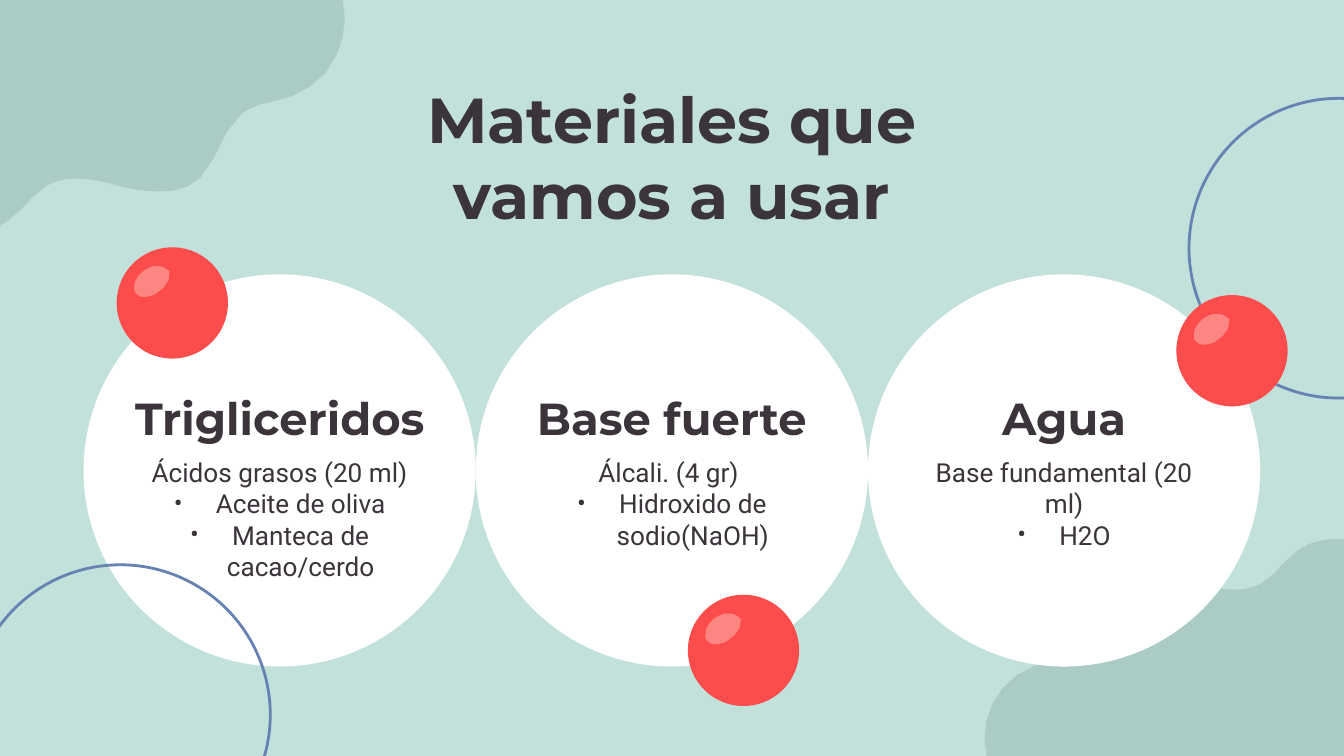
import pptx
import pptx.dml.color
import pptx.enum.shapes
import pptx.enum.text
import pptx.oxml
import pptx.oxml.ns
import pptx.util

Pt = pptx.util.Pt

COLORS = {
    "background": "C2E1DA",
    "blob": "AACCC4",
    "ring": "6582B2",
    "circle": "FFFFFF",
    "text": "3B343B",
    "ball": "FC4C4C",
    "highlight": "FC8782",
}
HEADING_FONT = "Montserrat"
BODY_FONT = "Roboto"
CIRCLE_LEFT, CIRCLE_TOP, CIRCLE_SIZE = 44.8, 147, 210.1
TEXT_WIDTH = 174.6
BALL_SIZE = 59.6
RING_SIZE = 160.6
INDENT = 22.5
CURVE_STEPS = 3

BLOB_HEIGHT = 116.4
BLOB_START = (190, 0)
BLOB_CURVES = [
    [(200, 0), (210, 3.6), (218, 10)],
    [(232.5, 22.3), (239.8, 41.8), (241.2, 61.2)],
    [(242.6, 79.9), (227.5, 97.9), (223.9, 116.4)],
    [(2.2, 116.4)],
    [(0, 107.3), (1.4, 97.2), (5, 89.3)],
    [(9.4, 79.2), (18, 72), (27.4, 68.4)],
    [(35.3, 65.5), (44.6, 65.5), (51.8, 60.5)],
    [(62.6, 52.6), (64.1, 36), (73.4, 27.4)],
    [(79.2, 22.3), (85.7, 20.9), (92.9, 20.9)],
    [(99.4, 20.9), (105.1, 21.6), (111.6, 23)],
    [(118.8, 25.2), (126.7, 27.4), (134.6, 27.4)],
    [(139.7, 27.4), (144.7, 26.6), (149.8, 23.8)],
    [(157, 19.4), (161.3, 12.2), (168.5, 6.5)],
    [(174.2, 2.2), (182.2, 0), (190, 0)],
]
HIGHLIGHT_START = (22.3, 10.1)
HIGHLIGHT_CURVES = [
    [(20.9, 10.1), (18.7, 10.1), (17.3, 10.8)],
    [(13.7, 12.2), (10.8, 15.1), (9.4, 18.7)],
    [(9.4, 20.9), (8.6, 22.3), (9.4, 23.8)],
    [(10.1, 25.2), (12.2, 26.6), (13.7, 26.6)],
    [(16.6, 26.6), (18.7, 25.9), (20.2, 25.2)],
    [(25.2, 22.3), (28.8, 18), (28.1, 13)],
    [(26.6, 11.5), (24.5, 10.1), (22.3, 10.1)],
]
MATERIALS = [
    ("Trigliceridos", "Ácidos grasos (20 ml)", ["Aceite de oliva", "Manteca de cacao/cerdo"]),
    ("Base fuerte", "Álcali. (4 gr) ", ["Hidroxido de sodio(NaOH)"]),
    ("Agua", "Base fundamental (20 ml)", ["H2O"]),
]
BALLS = [(62.5, 132.5), (368.5, 318.6), (630.2, 158.1)]


def color(name):
    return pptx.dml.color.RGBColor.from_string(COLORS[name])


def fill_shape(shape, name):
    shape.shadow.inherit = False
    shape.fill.solid()
    shape.fill.fore_color.rgb = color(name)
    shape.line.fill.background()


def add_ellipse(shapes, left, top, size):
    return shapes.add_shape(
        pptx.enum.shapes.MSO_SHAPE.OVAL, Pt(left), Pt(top), Pt(size), Pt(size)
    )


def add_ring(shapes, left, top):
    ring = add_ellipse(shapes, left, top, RING_SIZE)
    ring.shadow.inherit = False
    ring.fill.background()
    ring.line.color.rgb = color("ring")
    ring.line.width = Pt(1.5)


def outline_points(start, curves):
    points = [start]
    for curve in curves:
        if len(curve) == 1:
            points += curve
            continue
        controls = [points[-1], *curve]
        for step in range(1, CURVE_STEPS + 1):
            t = step / CURVE_STEPS
            weights = ((1 - t) ** 3, 3 * t * (1 - t) ** 2, 3 * t**2 * (1 - t), t**3)
            points.append(
                tuple(sum(w * p[axis] for w, p in zip(weights, controls)) for axis in (0, 1))
            )
    return points


def add_outline(shapes, start, curves, left, top, scale, name):
    points = [
        (Pt(left + x * scale), Pt(top + y * scale)) for x, y in outline_points(start, curves)
    ]
    builder = shapes.build_freeform(*points[0])
    builder.add_line_segments(points[1:-1], close=True)
    fill_shape(builder.convert_to_shape(), name)


def add_ball(slide, left, top):
    group = slide.shapes.add_group_shape()
    fill_shape(add_ellipse(group.shapes, left, top, BALL_SIZE), "ball")
    add_outline(group.shapes, HIGHLIGHT_START, HIGHLIGHT_CURVES, left + 0.3, top, 1, "highlight")


def prepare_frame(shape, anchor):
    frame = shape.text_frame
    frame.word_wrap = True
    frame.auto_size = pptx.enum.text.MSO_AUTO_SIZE.NONE
    frame.vertical_anchor = anchor
    frame.margin_left = frame.margin_right = Pt(7.2)
    frame.margin_top = frame.margin_bottom = Pt(7.2)
    return frame


def format_paragraph(paragraph, font_name, size, bold):
    paragraph.alignment = pptx.enum.text.PP_ALIGN.CENTER
    paragraph.line_spacing = 1.0
    paragraph.space_before = paragraph.space_after = Pt(0)
    for run in paragraph.runs:
        run.font.name = font_name
        run.font.size = Pt(size)
        run.font.bold = bold
        run.font.color.rgb = color("text")


def add_bullet(paragraph):
    properties = paragraph._p.get_or_add_pPr()
    properties.set("marL", str(Pt(INDENT)))
    properties.set("indent", str(-Pt(INDENT)))
    namespace = pptx.oxml.ns.nsdecls("a")
    for element in (
        f'<a:buClr {namespace}><a:srgbClr val="{COLORS["text"]}"/></a:buClr>',
        f'<a:buFont {namespace} typeface="{BODY_FONT}"/>',
        f'<a:buChar {namespace} char="•"/>',
    ):
        properties.append(pptx.oxml.parse_xml(element))


def set_title(slide, text):
    title = slide.shapes.title
    title.left, title.top, title.width, title.height = Pt(175.7), Pt(35.6), Pt(368.6), Pt(97.2)
    frame = prepare_frame(title, pptx.enum.text.MSO_ANCHOR.TOP)
    frame.text = text
    format_paragraph(frame.paragraphs[0], HEADING_FONT, 34, True)


def add_material(slide, left, heading, description, items):
    text_left = left + (CIRCLE_SIZE - TEXT_WIDTH) / 2
    heading_box = slide.shapes.add_textbox(Pt(text_left), Pt(201.6), Pt(TEXT_WIDTH), Pt(43.9))
    frame = prepare_frame(heading_box, pptx.enum.text.MSO_ANCHOR.BOTTOM)
    frame.text = heading
    format_paragraph(frame.paragraphs[0], HEADING_FONT, 24, True)

    height = 49.5 + 16 * len(items)
    body_box = slide.shapes.add_textbox(Pt(text_left), Pt(237.2), Pt(TEXT_WIDTH), Pt(height))
    frame = prepare_frame(body_box, pptx.enum.text.MSO_ANCHOR.TOP)
    frame.text = "\n".join([description, *items])
    for index, paragraph in enumerate(frame.paragraphs):
        format_paragraph(paragraph, BODY_FONT, 14, False)
        if index:
            add_bullet(paragraph)


def main():
    presentation = pptx.Presentation()
    presentation.slide_width, presentation.slide_height = Pt(720), Pt(405)
    slide = presentation.slides.add_slide(presentation.slide_layouts[5])
    slide.background.fill.solid()
    slide.background.fill.fore_color.rgb = color("background")
    set_title(slide, "Materiales que vamos a usar")

    add_outline(slide.shapes, BLOB_START, BLOB_CURVES, 186, 125.1, -1.075, "blob")
    add_outline(slide.shapes, BLOB_START, BLOB_CURVES, 526.3, 405 - BLOB_HEIGHT, 1, "blob")
    add_ring(slide.shapes, 637, 52.7)

    circle_lefts = [CIRCLE_LEFT + index * CIRCLE_SIZE for index in range(len(MATERIALS))]
    for left in circle_lefts:
        fill_shape(add_ellipse(slide.shapes, left, CIRCLE_TOP, CIRCLE_SIZE), "circle")
    for left, material in zip(circle_lefts, MATERIALS):
        add_material(slide, left, *material)
    for left, top in BALLS:
        add_ball(slide, left, top)
    add_ring(slide.shapes, -15.8, 302.6)
    presentation.save("out.pptx")


if __name__ == "__main__":
    main()
